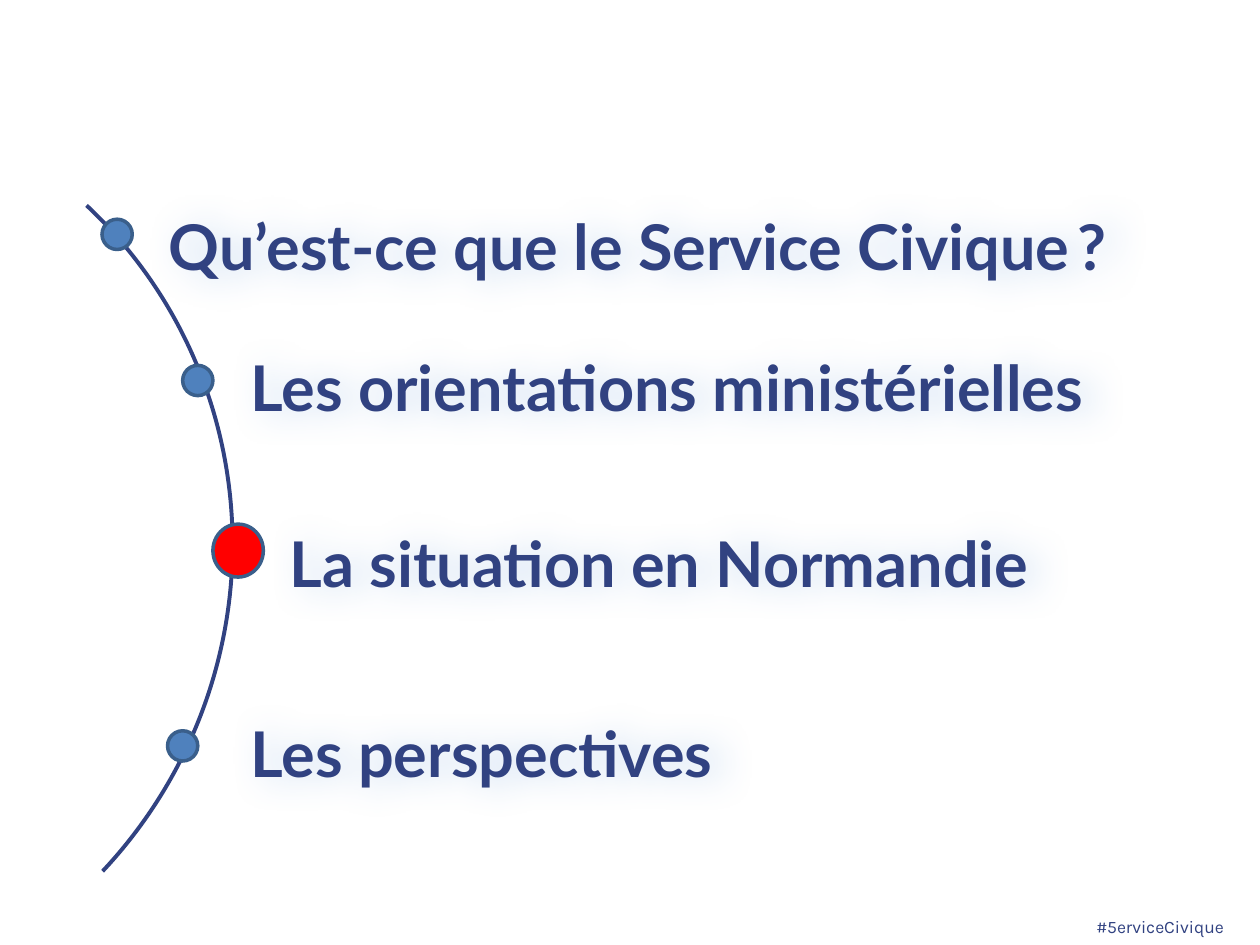
from dataclasses import dataclass

from lxml import etree
from pptx import Presentation
from pptx.dml.color import RGBColor
from pptx.enum.shapes import MSO_SHAPE
from pptx.enum.text import MSO_ANCHOR, PP_ALIGN
from pptx.util import Inches, Pt


@dataclass(frozen=True)
class Theme:
    navy = RGBColor.from_string("314281")
    blue = RGBColor.from_string("4F81BD")
    outline = RGBColor.from_string("3A5F8B")
    red = RGBColor.from_string("FF0000")
    glow = "8EB4E3"
    heading_font = "Lato"
    footer_font = "Karla"
    heading_size = Pt(36)
    gap_size = Pt(18)
    footer_size = Pt(10)


THEME = Theme()
DRAWING_NS = "http://schemas.openxmlformats.org/drawingml/2006/main"
TEXT_SHADOW = f"""<a:effectLst xmlns:a="{DRAWING_NS}">
  <a:outerShdw blurRad="{Pt(20)}" dist="{Pt(6)}" dir="60000" algn="tl" rotWithShape="0">
    <a:srgbClr val="{THEME.glow}"><a:alpha val="45000"/></a:srgbClr>
  </a:outerShdw>
</a:effectLst>"""


def add_shape(kind, left, top, width, height):
    sp = s.shapes.add_shape(kind, Inches(left), Inches(top), Inches(width), Inches(height))
    sp.shadow.inherit = False
    return sp


prs = Presentation()
prs.slide_width, prs.slide_height = Inches(10), Inches(7.5)
s = prs.slides.add_slide(prs.slide_layouts[6])

# Footer
footer = s.shapes.add_textbox(Inches(7.76), Inches(7.22), Inches(2.05), Inches(0.27))
footer.text_frame.word_wrap = True
p = footer.text_frame.paragraphs[0]
p.text = "#5erviceCivique"
p.alignment = PP_ALIGN.RIGHT
p.font.size = THEME.footer_size
p.font.name = THEME.footer_font
p.font.color.rgb = THEME.navy

# Curve: the default quarter arc, turned to face right
arc = add_shape(MSO_SHAPE.ARC, -5.6, 0.61, 7.42, 7.53)
arc.rotation = 43.2
arc.fill.background()
arc.line.color.rgb = THEME.navy
arc.line.width = Pt(2.25)

# Agenda headings: left, top, width, text pieces with their sizes
headings = [
    (1.24, 1.6, 8.3, [("Qu’est-ce que le Service Civique", THEME.heading_size),
                      (" ", THEME.gap_size), ("?", THEME.heading_size)]),
    (1.89, 2.72, 7.42, [("Les orientations ministérielles", THEME.heading_size)]),
    (2.2, 4.11, 6.54, [("La situation en Normandie", THEME.heading_size)]),
    (1.89, 5.62, 4.26, [("Les perspectives", THEME.heading_size)]),
]
for left, top, width, pieces in headings:
    sp = add_shape(MSO_SHAPE.RECTANGLE, left, top, width, 0.61)
    sp.fill.background()
    sp.line.fill.background()
    effects = sp._element.spPr.find(f"{{{DRAWING_NS}}}effectLst")
    effects.getparent().replace(effects, etree.fromstring(TEXT_SHADOW))
    tf = sp.text_frame
    tf.word_wrap = True
    tf.vertical_anchor = MSO_ANCHOR.TOP
    p = tf.paragraphs[0]
    p.alignment = PP_ALIGN.LEFT
    for text, size in pieces:
        r = p.add_run()
        r.text = text
        r.font.size = size
        r.font.name = THEME.heading_font
        r.font.bold = True
        r.font.color.rgb = THEME.navy

# Markers on the curve; the current section is larger and red
markers = [
    (0.81, 1.74, 0.24, 0.24, THEME.blue),
    (1.45, 2.9, 0.24, 0.24, THEME.blue),
    (1.69, 4.16, 0.4, 0.42, THEME.red),
    (1.33, 5.8, 0.24, 0.24, THEME.blue),
]
for left, top, width, height, color in markers:
    dot = add_shape(MSO_SHAPE.OVAL, left, top, width, height)
    dot.fill.solid()
    dot.fill.fore_color.rgb = color
    dot.line.color.rgb = THEME.outline
    dot.line.width = Pt(2)

prs.save("out.pptx")
